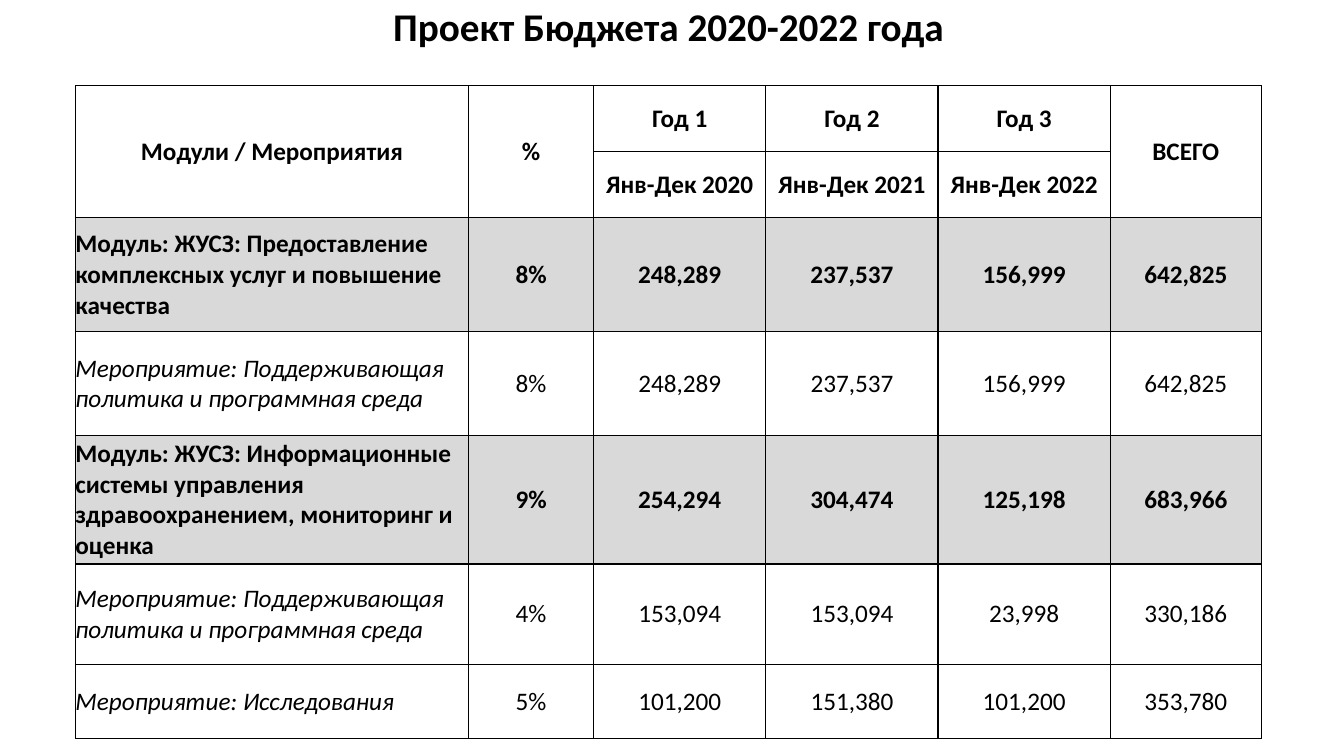
from dataclasses import dataclass

from lxml.etree import SubElement
from pptx import Presentation
from pptx.dml.color import RGBColor
from pptx.enum.text import MSO_ANCHOR as Anchor, PP_ALIGN as Align
from pptx.oxml.ns import qn
from pptx.slide import Slide
from pptx.table import Table, _Cell as Cell
from pptx.text.text import _Paragraph as Paragraph
from pptx.util import Cm, Pt


@dataclass(frozen=True)
class Theme:
    font: str = "Calibri"
    ink: str = "000000"
    module_fill: str = "D9D9D9"
    title_size: int = 28
    table_size: int = 18
    border_width: int = 1


@dataclass(frozen=True)
class BudgetLine:
    name: str
    figures: tuple[str, ...]
    height: float
    is_module: bool = False


THEME = Theme()
TITLE = "Проект Бюджета 2020-2022 года"
COLUMN_WIDTHS = (9.91, 3.15, 4.34, 4.34, 4.34, 3.81)
HEADER_HEIGHTS = (1.65, 1.68)
HEADER_ROWS = (
    ("Модули / Мероприятия", "%", "Год 1", "Год 2", "Год 3", "ВСЕГО"),
    ("", "", "Янв-Дек 2020", "Янв-Дек 2021", "Янв-Дек 2022", ""),
)
BUDGET_LINES = (
    BudgetLine("Модуль: ЖУСЗ: Предоставление комплексных услуг и повышение качества",
               ("8%", "248,289", "237,537", "156,999", "642,825"), 2.87, True),
    BudgetLine("Мероприятие: Поддерживающая политика и программная среда",
               ("8%", "248,289", "237,537", "156,999", "642,825"), 2.62),
    BudgetLine("Модуль: ЖУСЗ: Информационные системы управления "
               "здравоохранением, мониторинг и оценка",
               ("9%", "254,294", "304,474", "125,198", "683,966"), 3.23, True),
    BudgetLine("Мероприятие: Поддерживающая политика и программная среда",
               ("4%", "153,094", "153,094", "23,998", "330,186"), 2.54),
    BudgetLine("Мероприятие: Исследования",
               ("5%", "101,200", "151,380", "101,200", "353,780"), 1.85),
)


def format_paragraph(paragraph: Paragraph, size: int, align: Align,
                     bold: bool = False, italic: bool = False) -> None:
    paragraph.alignment = align
    for run in paragraph.runs:
        font = run.font
        font.name, font.size = THEME.font, Pt(size)
        font.bold, font.italic = bold, italic
        font.color.rgb = RGBColor.from_string(THEME.ink)


def add_borders(cell: Cell) -> None:
    properties = cell._tc.get_or_add_tcPr()
    for side in ("lnL", "lnR", "lnT", "lnB"):
        line = SubElement(properties, qn(f"a:{side}"), w=str(Pt(THEME.border_width)))
        fill = SubElement(line, qn("a:solidFill"))
        SubElement(fill, qn("a:srgbClr"), val=THEME.ink)


def fill_cell(cell: Cell, text: str, align: Align, bold: bool = False,
              italic: bool = False, shaded: bool = False) -> None:
    cell.margin_left = cell.margin_right = cell.margin_top = cell.margin_bottom = 0
    cell.vertical_anchor = Anchor.MIDDLE
    add_borders(cell)
    if shaded:
        cell.fill.solid()
        cell.fill.fore_color.rgb = RGBColor.from_string(THEME.module_fill)
    else:
        cell.fill.background()
    cell.text_frame.text = text
    format_paragraph(cell.text_frame.paragraphs[0], THEME.table_size, align, bold, italic)


def add_title(slide: Slide) -> None:
    box = slide.shapes.add_textbox(Cm(2.24), Cm(0), Cm(29.21), Cm(1.47))
    frame = box.text_frame
    frame.word_wrap = True
    frame.vertical_anchor = Anchor.MIDDLE
    frame.text = TITLE
    paragraph = frame.paragraphs[0]
    paragraph.line_spacing = 0.9
    format_paragraph(paragraph, THEME.title_size, Align.CENTER, bold=True)


def fill_header(table: Table) -> None:
    for row, labels in enumerate(HEADER_ROWS):
        for column, label in enumerate(labels):
            fill_cell(table.cell(row, column), label, Align.CENTER, bold=True)
    for column, label in enumerate(HEADER_ROWS[1]):
        if not label:
            table.cell(0, column).merge(table.cell(1, column))


def fill_budget_line(table: Table, row: int, line: BudgetLine) -> None:
    module = line.is_module
    fill_cell(table.cell(row, 0), line.name, Align.LEFT,
              bold=module, italic=not module, shaded=module)
    for column, figure in enumerate(line.figures, start=1):
        fill_cell(table.cell(row, column), figure, Align.CENTER, bold=module, shaded=module)


def add_budget_table(slide: Slide) -> None:
    heights = HEADER_HEIGHTS + tuple(line.height for line in BUDGET_LINES)
    table = slide.shapes.add_table(
        len(heights), len(COLUMN_WIDTHS), Cm(1.9), Cm(2.16),
        Cm(sum(COLUMN_WIDTHS)), Cm(sum(heights))).table
    table.first_row = table.horz_banding = False
    for column, width in zip(table.columns, COLUMN_WIDTHS):
        column.width = Cm(width)
    for row, height in zip(table.rows, heights):
        row.height = Cm(height)
    fill_header(table)
    for row, line in enumerate(BUDGET_LINES, start=len(HEADER_ROWS)):
        fill_budget_line(table, row, line)


def main() -> None:
    presentation = Presentation()
    presentation.slide_width, presentation.slide_height = Cm(33.87), Cm(19.05)
    slide = presentation.slides.add_slide(presentation.slide_layouts[6])
    add_title(slide)
    add_budget_table(slide)
    presentation.save("out.pptx")


if __name__ == "__main__":
    main()
